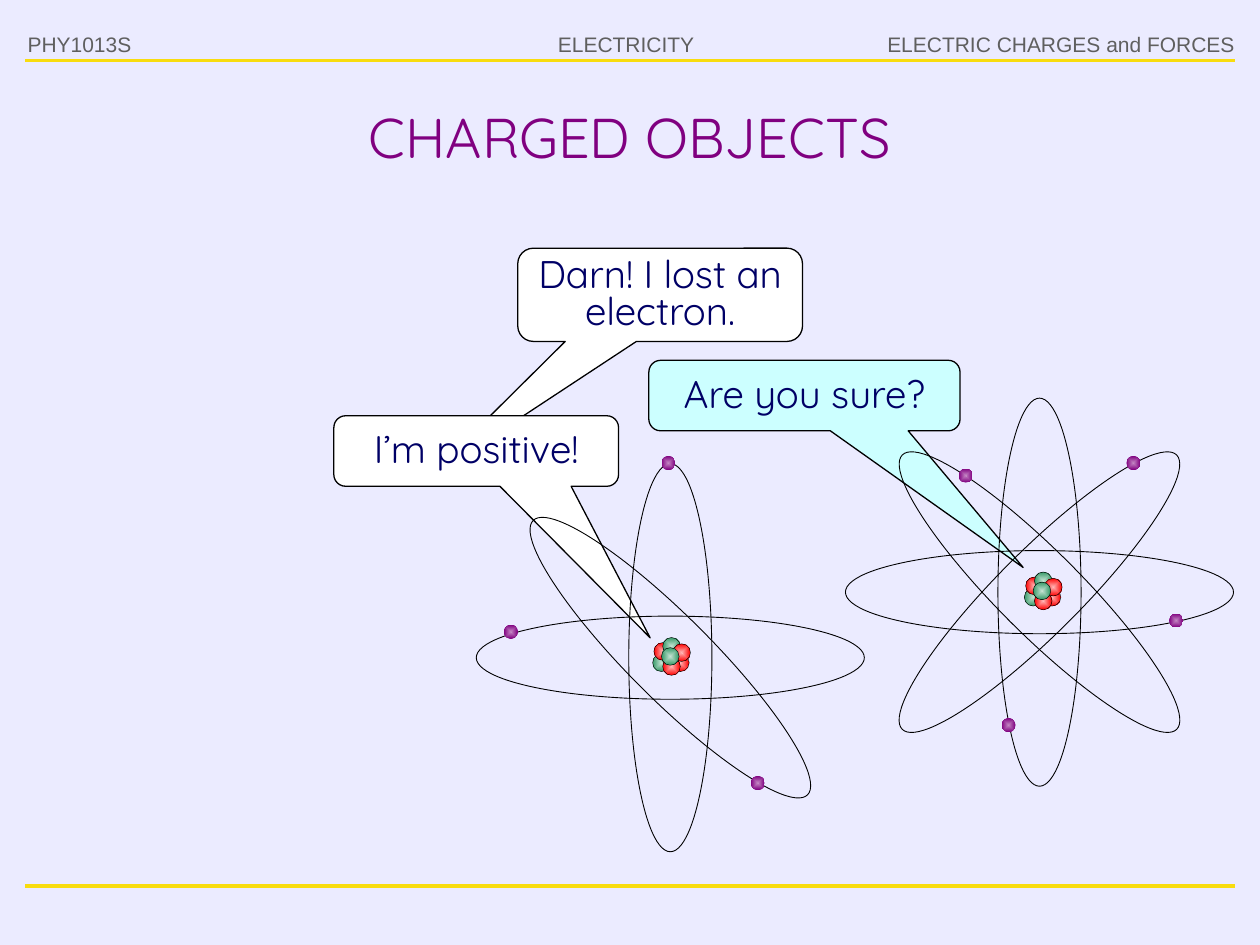
from lxml import etree
from pptx import Presentation
from pptx.dml.color import RGBColor
from pptx.enum.shapes import MSO_CONNECTOR, MSO_SHAPE
from pptx.enum.text import MSO_ANCHOR, MSO_AUTO_SIZE, PP_ALIGN
from pptx.oxml import parse_xml
from pptx.oxml.ns import qn
from pptx.util import Inches, Pt

LINE = MSO_CONNECTOR.STRAIGHT
OVAL = MSO_SHAPE.OVAL
BUBBLE = MSO_SHAPE.ROUNDED_RECTANGULAR_CALLOUT
TOP, MIDDLE = MSO_ANCHOR.TOP, MSO_ANCHOR.MIDDLE
LEFT, CENTER, RIGHT = PP_ALIGN.LEFT, PP_ALIGN.CENTER, PP_ALIGN.RIGHT
GROW = MSO_AUTO_SIZE.SHAPE_TO_FIT_TEXT
DRAW_NS = "http://schemas.openxmlformats.org/drawingml/2006/main"

COLORS = {
    "back": "EBEBFF", "rule": "F8DC0E", "head": "5F5F5F", "title": "800080",
    "speech": "000066", "white": "FFFFFF", "cyan": "CCFFFF", "black": "000000",
}
BALLS = {
    "neutron": ("C5E2D3", "339966"),
    "proton": ("FFB6B6", "FF0000"),
    "electron": ("C386C3", "800080"),
}
FONTS = {
    "head": {"name": "Arial", "size": Pt(12)},
    "title": {"name": "Quicksand", "size": Pt(32)},
    "speech": {"name": "Quicksand", "size": Pt(22)},
}
NUCLEUS = [
    ("neutron", 0, 0), ("proton", 0.07, 0.05), ("neutron", -0.08, 0.05),
    ("proton", -0.07, -0.04), ("neutron", 0, -0.08), ("proton", 0, 0.08),
    ("proton", 0.08, -0.03), ("neutron", -0.01, 0),
]
ORBIT = (3.08, 0.66)


def color(key):
    return RGBColor.from_string(COLORS[key])


def write(frame, text, style, align, space=None):
    frame.text = text
    para = frame.paragraphs[0]
    para.alignment = align
    if space:
        para.line_spacing = space
    for name, value in FONTS[style].items():
        setattr(para.font, name, value)
    para.font.color.rgb = color(style)


def add_rule(slide, y, width):
    rule = slide.shapes.add_connector(
        LINE, Inches(0.2), Inches(y), Inches(9.8), Inches(y))
    rule.line.color.rgb = color("rule")
    rule.line.width = Pt(width)
    etree.SubElement(rule.element.spPr, qn("a:effectLst"))


def add_head(slide, text, box, align, wrap=False):
    head = slide.shapes.add_textbox(*map(Inches, box))
    frame = head.text_frame
    frame.word_wrap = wrap
    if not wrap:
        frame.auto_size = GROW
    write(frame, text, "head", align)


def add_title(slide, text):
    title = slide.shapes.title
    place = {"left": 0.5, "top": 0.72, "width": 9, "height": 0.72}
    for name, value in place.items():
        setattr(title, name, Inches(value))
    title.text_frame.vertical_anchor = MIDDLE
    write(title.text_frame, text, "title", CENTER)


def add_bubble(slide, text, box, tip, fill, space=None):
    bubble = slide.shapes.add_shape(BUBBLE, *map(Inches, box))
    bubble.shadow.inherit = False
    bubble.element.spPr.xfrm.set("flipH", "1")
    for index, value in enumerate((*tip, 0.167)):
        bubble.adjustments[index] = value
    bubble.fill.solid()
    bubble.fill.fore_color.rgb = color(fill)
    bubble.line.color.rgb = color("black")
    bubble.line.width = Pt(0.75)
    bubble.text_frame.word_wrap = True
    bubble.text_frame.vertical_anchor = TOP
    write(bubble.text_frame, text, "speech", CENTER, space)


def add_oval(group, x, y, width, height, stroke):
    oval = group.shapes.add_shape(OVAL, *map(Inches, (x, y, width, height)))
    oval.shadow.inherit = False
    oval.fill.background()
    if stroke:
        oval.line.color.rgb = color("black")
        oval.line.width = Pt(stroke)
    else:
        oval.line.fill.background()
    return oval


def add_ball(group, kind, x, y, size, stroke=0):
    ball = add_oval(group, x, y, size, size, stroke)
    inner, outer = BALLS[kind]
    shade = parse_xml(
        f'<a:gradFill xmlns:a="{DRAW_NS}" rotWithShape="1"><a:gsLst>'
        f'<a:gs pos="0"><a:srgbClr val="{inner}"/></a:gs>'
        f'<a:gs pos="100000"><a:srgbClr val="{outer}"/></a:gs></a:gsLst>'
        '<a:path path="shape"><a:fillToRect l="50000" t="50000" '
        'r="50000" b="50000"/></a:path></a:gradFill>')
    props = ball.element.spPr
    props.replace(props.find(qn("a:noFill")), shade)


def add_atom(slide, orbit, turns, core, spots):
    group = slide.shapes.add_group_shape()
    for turn in turns:
        add_oval(group, *orbit, *ORBIT, 0.5).rotation = turn
    for kind, dx, dy in NUCLEUS:
        add_ball(group, kind, core[0] + dx, core[1] + dy, 0.14, 0.25)
    for x, y in spots:
        add_ball(group, "electron", x, y, 0.11)


def main():
    deck = Presentation()
    deck.slide_width, deck.slide_height = Inches(10), Inches(7.5)
    slide = deck.slides.add_slide(deck.slide_layouts[5])
    slide.background.fill.solid()
    slide.background.fill.fore_color.rgb = color("back")

    add_rule(slide, 0.48, 1.75)
    add_rule(slide, 7.03, 2.25)
    add_head(slide, "ELECTRICITY", (4.27, 0.2, 1.4, 0.3), CENTER)
    add_title(slide, "CHARGED OBJECTS")

    add_bubble(slide, "Darn! I lost an electron.", (4.11, 1.97, 2.26, 0.74),
               (0.826, 1.993), "white", 0.8)
    add_bubble(slide, "Are you sure?", (5.15, 2.86, 2.47, 0.56),
               (-0.703, 2.438), "cyan")
    add_bubble(slide, "I’m positive!", (2.65, 3.3, 2.26, 0.56),
               (-0.611, 2.648), "white")

    add_atom(slide, (3.78, 4.89), (0, 90, 45), (5.26, 5.14),
             [(4, 4.96), (5.25, 3.62), (5.96, 6.16)])
    add_atom(slide, (6.71, 4.37), (0, 90, 45, 315), (8.21, 4.62),
             [(9.28, 4.87), (7.61, 3.72), (7.95, 5.7), (8.94, 3.62)])

    add_head(slide, "ELECTRIC CHARGES and FORCES", (6.41, 0.2, 3.49, 0.3), RIGHT)
    add_head(slide, "PHY1013S", (0.12, 0.2, 1.18, 0.32), LEFT, True)
    deck.save("out.pptx")


if __name__ == "__main__":
    main()
